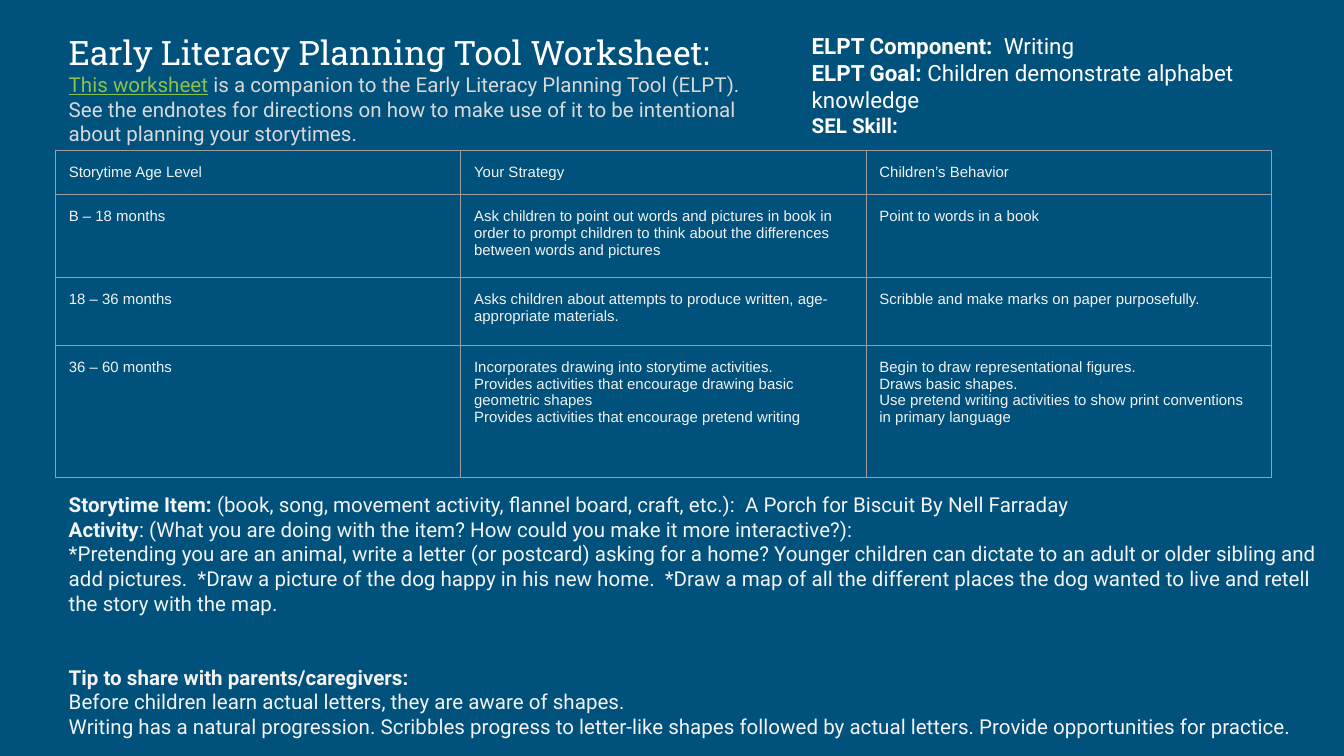
from lxml import etree
from pptx import Presentation, util as u
from pptx.dml.color import RGBColor
from pptx.enum import text
from pptx.oxml import ns

# Content: a paragraph is a list of (words, style name)
HEADING = [
    [("Early Literacy Planning Tool Worksheet:", "title")],
    [("This worksheet", "link"),
     (" is a companion to the Early Literacy Planning Tool (ELPT). See the endnotes for "
      "directions on how to make use of it to be intentional about planning your storytimes.",
      "intro")],
]
GOALS = [
    [("ELPT Component:  ", "goal_label"), ("Writing", "goal")],
    [("ELPT Goal: ", "goal_label"), ("Children demonstrate alphabet knowledge", "goal")],
    [("SEL Skill:", "skill_label")],
]
STRATEGIES = [
    ("Storytime Age Level", "Your Strategy", "Children’s Behavior"),
    ("B – 18 months",
     "Ask children to point out words and pictures in book in order to prompt children to "
     "think about the differences between words and pictures",
     "Point to words in a book"),
    ("18 – 36 months",
     "Asks children about attempts to produce written, age-appropriate materials.",
     "Scribble and make marks on paper purposefully."),
    ("36 – 60 months",
     "Incorporates drawing into storytime activities.\n"
     "Provides activities that encourage drawing basic geometric shapes\n"
     "Provides activities that encourage pretend writing",
     "Begin to draw representational figures.\n"
     "Draws basic shapes.\n"
     "Use pretend writing activities to show print conventions in primary language"),
]
ACTIVITY = [
    [("Storytime Item:", "label"),
     (" (book, song, movement activity, flannel board, craft, etc.):  "
      "A Porch for Biscuit By Nell Farraday", "body")],
    [("Activity", "label"),
     (": (What you are doing with the item? How could you make it more interactive?):", "body")],
    [("*Pretending you are an animal, write a letter (or postcard) asking for a home? Younger "
      "children can dictate to an adult or older sibling and add pictures.  *Draw a picture of "
      "the dog happy in his new home.  *Draw a map of all the different places the dog wanted "
      "to live and retell the story with the map.", "body")],
    [("Tip to share with parents/caregivers:", "tip_label")],
    [("Before children learn actual letters, they are aware of shapes.", "body")],
    [("Writing has a natural progression. Scribbles progress to letter-like shapes followed by "
      "actual letters. Provide opportunities for practice.", "body")],
]

# Theme: colours, and font formats by style name
WHITE, PALE = "FFFFFF", "F3F3F3"


def style(size, color, name="Roboto", bold=False, underline=False):
    return {"size": u.Pt(size), "color": color, "name": name,
            "bold": bold, "underline": underline}


THEME = {
    "background": "00517C",
    "border": "9E9E9E",
    "border_width": u.Pt(0.75),
    "title": style(18, WHITE, "Roboto Slab"),
    "link": style(11, "8BC34A", underline=True),
    "intro": style(11, "D9D9D9"),
    "goal_label": style(12, WHITE, bold=True),
    "goal": style(12, WHITE),
    "skill_label": style(11, WHITE, bold=True),
    "cell": style(8, PALE, "Arial"),
    "label": style(11, PALE, bold=True),
    "tip_label": style(11, PALE, bold=True),
    "body": style(11, PALE),
}
SPACE_BEFORE = {"tip_label": u.Pt(26.4)}

# Layout
LEFT, INSET = 1.05, 0.25
COLUMN_WIDTH = 7.66
ROW_HEIGHTS = [0.81, 1.57, 1.28, 2.49]
TABLE_TOP = 2.84
MARGINS = {f"margin_{side}": u.Cm(INSET) for side in ("left", "top", "right", "bottom")}


def set_all(target, values):
    for name, value in values.items():
        setattr(target, name, value)


def write(frame, paragraphs):
    for index, spans in enumerate(paragraphs):
        para = frame.paragraphs[0] if index == 0 else frame.add_paragraph()
        para.space_before = SPACE_BEFORE.get(spans[0][1], u.Pt(0))
        for words, style_name in spans:
            span = para.add_run()
            span.text = words
            for name, value in THEME[style_name].items():
                if name == "color":
                    span.font.color.rgb = RGBColor.from_string(value)
                else:
                    setattr(span.font, name, value)


def add_text(page, place, paragraphs, anchor=text.MSO_ANCHOR.TOP):
    box = page.shapes.add_textbox(*map(u.Cm, place))
    set_all(box.text_frame, {"word_wrap": True, "vertical_anchor": anchor, **MARGINS})
    write(box.text_frame, paragraphs)


def add_borders(cell):
    properties = cell._tc.get_or_add_tcPr()
    for index, side in enumerate(("lnL", "lnR", "lnT", "lnB")):
        line = etree.Element(ns.qn(f"a:{side}"), w=str(THEME["border_width"]))
        fill = etree.SubElement(line, ns.qn("a:solidFill"))
        etree.SubElement(fill, ns.qn("a:srgbClr"), val=THEME["border"])
        properties.insert(index, line)


def add_strategy_table(page):
    columns = len(STRATEGIES[0])
    table = page.shapes.add_table(
        len(STRATEGIES), columns, u.Cm(LEFT), u.Cm(TABLE_TOP),
        u.Cm(COLUMN_WIDTH * columns), u.Cm(sum(ROW_HEIGHTS))).table
    set_all(table, {"first_row": False, "horz_banding": False})
    for column in table.columns:
        column.width = u.Cm(COLUMN_WIDTH)
    for row, height, entries in zip(table.rows, ROW_HEIGHTS, STRATEGIES):
        row.height = u.Cm(height)
        for cell, entry in zip(row.cells, entries):
            set_all(cell, MARGINS)
            cell.fill.background()
            add_borders(cell)
            write(cell.text_frame, [[(line, "cell")] for line in entry.split("\n")])


def main():
    deck = Presentation()
    set_all(deck, {"slide_width": u.Cm(25.4), "slide_height": u.Cm(14.29)})
    page = deck.slides.add_slide(deck.slide_layouts[6])
    page.background.fill.solid()
    page.background.fill.fore_color.rgb = RGBColor.from_string(THEME["background"])

    # Heading and goals
    add_text(page, (LEFT, 0.51, 13.74, 2.34), HEADING, text.MSO_ANCHOR.MIDDLE)
    add_text(page, (15.09, 0.36, 8.92, 2.34), GOALS)
    # Strategies by age
    add_strategy_table(page)
    # Activity and tip
    add_text(page, (LEFT, 9.05, 24.16, 4.93), ACTIVITY)

    deck.save("out.pptx")


if __name__ == "__main__":
    main()
